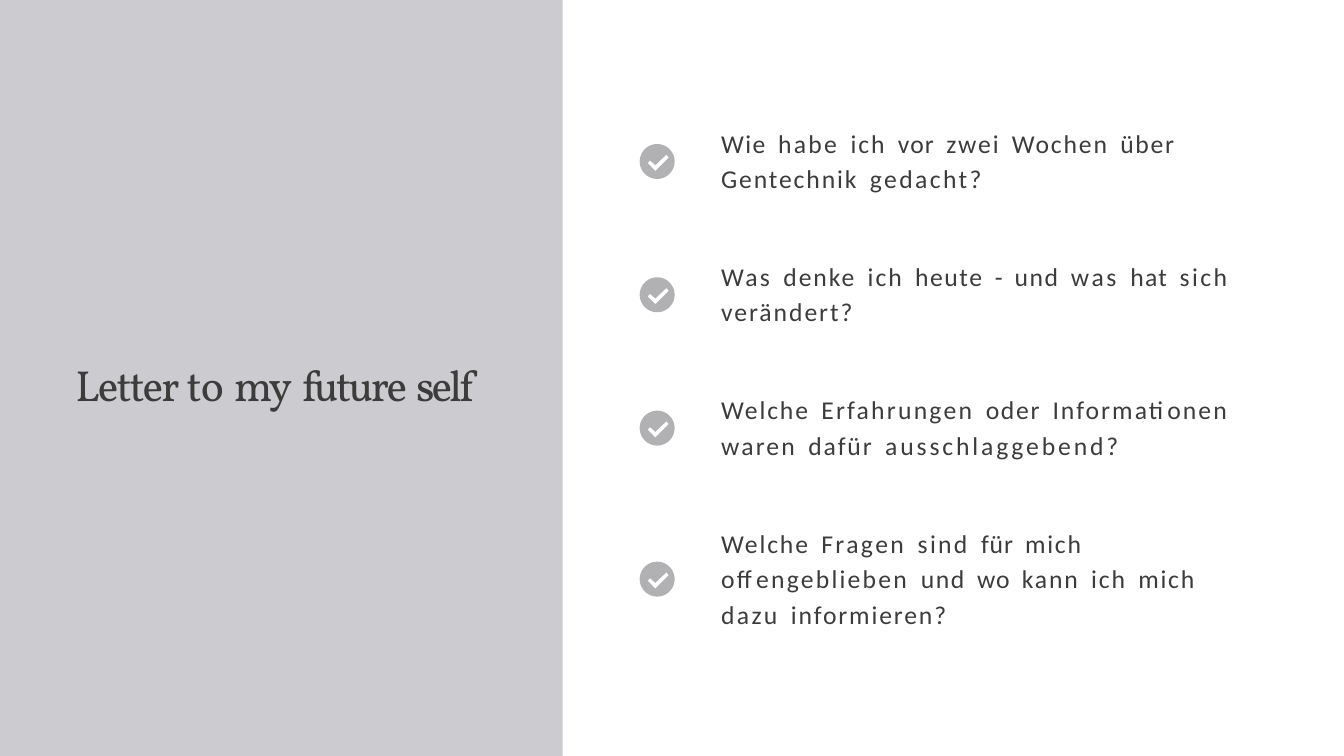
import math

import lxml.etree
import pptx
import pptx.dml.color
import pptx.enum.shapes
import pptx.enum.text
import pptx.oxml.ns
import pptx.util

Cm = pptx.util.Cm
COLORS = {"panel": "CCCCD0", "icon": "B1B1B4", "text": "3C3C3C"}

HEADING = [
    ("Letter ", -1.9), ("to", -0.5), (" ", 1.6), ("my", -2.1), (" ", 1.1),
    ("future", -2.6), (" ", -1.6), ("self", -3.2),
]

QUESTIONS = [
    {"width": 17.6, "height": 2.77, "words": [
        ("Wie", 1.5), ("habe", 2.5), ("ich", 2.1), ("vor", 1.2), ("zwei", 2.1),
        ("Wochen", 2), ("über", 1.9), ("Gentechnik", 2), ("gedacht?", 2.6)]},
    {"width": 19.7, "height": 2.77, "words": [
        ("Was", 2.4), ("denke", 2.1), ("ich", 2.1), ("heute", 1.7), ("-", 0.5), ("und", 1.7),
        ("was", 2.8), ("hat", 1.4), ("sich", 2.6), ("verändert?", 2.1)]},
    {"width": 19.8, "height": 2.77, "words": [
        ("Welche", 2), ("Erfahrungen", 2.4), ("oder", 1.8), ("Informationen", 2.2),
        ("waren", 2.3), ("dafür", 2.1), ("ausschlaggebend?", 3.1)]},
    {"width": 18.6, "height": 4.11, "words": [
        ("Welche", 2), ("Fragen", 2.6), ("sind", 2.5), ("für", 0.9), ("mich", 1.9),
        ("offengeblieben", 2.4), ("und", 1.7), ("wo", 1), ("kann", 2), ("ich", 2.1),
        ("mich", 1.9), ("dazu", 2.5), ("informieren?", 2)]},
]
WORD_GAP_TRACKING = 5.8
QUESTION_LEFT, QUESTION_TOP, QUESTION_PITCH = 27.23, 4.62, 5.04

ICON_CENTER, ICON_RADIUS, ICON_DROP = 24.84, 0.66, 0.1
CIRCLE_STEPS = 48
CHECK_MARK = [(0.35, -0.26), (0.44, -0.15), (-0.07, 0.36), (-0.36, 0.06), (-0.27, -0.04), (-0.07, 0.14)]


def rgb(name):
    return pptx.dml.color.RGBColor.from_string(COLORS[name])


def paint(shape, color):
    shape.fill.solid()
    shape.fill.fore_color.rgb = rgb(color)
    shape.line.fill.background()
    shape.shadow.inherit = False


def add_panel(slide, width, height):
    panel = slide.shapes.add_shape(pptx.enum.shapes.MSO_SHAPE.RECTANGLE, 0, 0, width, height)
    paint(panel, "panel")
    slide.shapes.element.insert(2, panel.element)


def place(placeholder, left, top, width, height):
    placeholder.left, placeholder.top = Cm(left), Cm(top)
    placeholder.width, placeholder.height = Cm(width), Cm(height)
    frame = placeholder.text_frame
    frame.word_wrap = True
    frame.auto_size = pptx.enum.text.MSO_AUTO_SIZE.NONE
    frame.vertical_anchor = pptx.enum.text.MSO_ANCHOR.TOP
    frame.margin_left = frame.margin_right = frame.margin_bottom = 0
    frame.margin_top = Cm(0.03)
    return frame.paragraphs[0]


def format_paragraph(paragraph, spacing):
    paragraph.alignment = pptx.enum.text.PP_ALIGN.LEFT
    paragraph.line_spacing = spacing
    paragraph.space_before = paragraph.space_after = pptx.util.Pt(0)
    properties = paragraph._p.get_or_add_pPr()
    properties.set("marL", str(Cm(0.03)))
    properties.set("indent", "0")
    lxml.etree.SubElement(properties, pptx.oxml.ns.qn("a:buNone"))


def add_run(paragraph, text, tracking, font_name, size):
    run = paragraph.add_run()
    run.text = text
    run.font.name = font_name
    run.font.size = pptx.util.Pt(size)
    run.font.bold = False
    run.font.color.rgb = rgb("text")
    run._r.get_or_add_rPr().set("spc", str(round(tracking * 100)))


def fill_heading(placeholder):
    paragraph = place(placeholder, 2.82, 13.5, 15.11, 2.06)
    format_paragraph(paragraph, 1.0)
    for text, tracking in HEADING:
        add_run(paragraph, text, tracking, "Vollkorn", 46.5)


def fill_question(placeholder, question, top):
    paragraph = place(placeholder, QUESTION_LEFT, top, question["width"], question["height"])
    format_paragraph(paragraph, 1.15)
    for index, (word, tracking) in enumerate(question["words"]):
        if index:
            add_run(paragraph, " ", WORD_GAP_TRACKING, "Calibri", 27.5)
        add_run(paragraph, word, tracking, "Calibri", 27.5)


def add_check_icon(slide, center_y):
    angles = [2 * math.pi * step / CIRCLE_STEPS for step in range(CIRCLE_STEPS)]
    circle = [(ICON_RADIUS * math.cos(angle), ICON_RADIUS * math.sin(angle)) for angle in angles]
    circle, check = [
        [(Cm(ICON_CENTER + x), Cm(center_y + y)) for x, y in outline] for outline in (circle, CHECK_MARK)
    ]
    builder = slide.shapes.build_freeform(*circle[0])
    builder.add_line_segments(circle[1:], close=True)
    builder.move_to(*check[0])
    builder.add_line_segments(check[1:], close=True)
    paint(builder.convert_to_shape(), "icon")


def main():
    presentation = pptx.Presentation()
    presentation.slide_width, presentation.slide_height = Cm(50.8), Cm(28.58)
    slide = presentation.slides.add_slide(presentation.slide_layouts.get_by_name("Comparison"))
    add_panel(slide, Cm(21.27), presentation.slide_height)
    heading, *bodies = slide.placeholders
    fill_heading(heading)
    for index, (body, question) in enumerate(zip(bodies, QUESTIONS)):
        top = QUESTION_TOP + index * QUESTION_PITCH
        fill_question(body, question, top)
        add_check_icon(slide, top + question["height"] / 2 + ICON_DROP)
    presentation.save("out.pptx")


if __name__ == "__main__":
    main()
